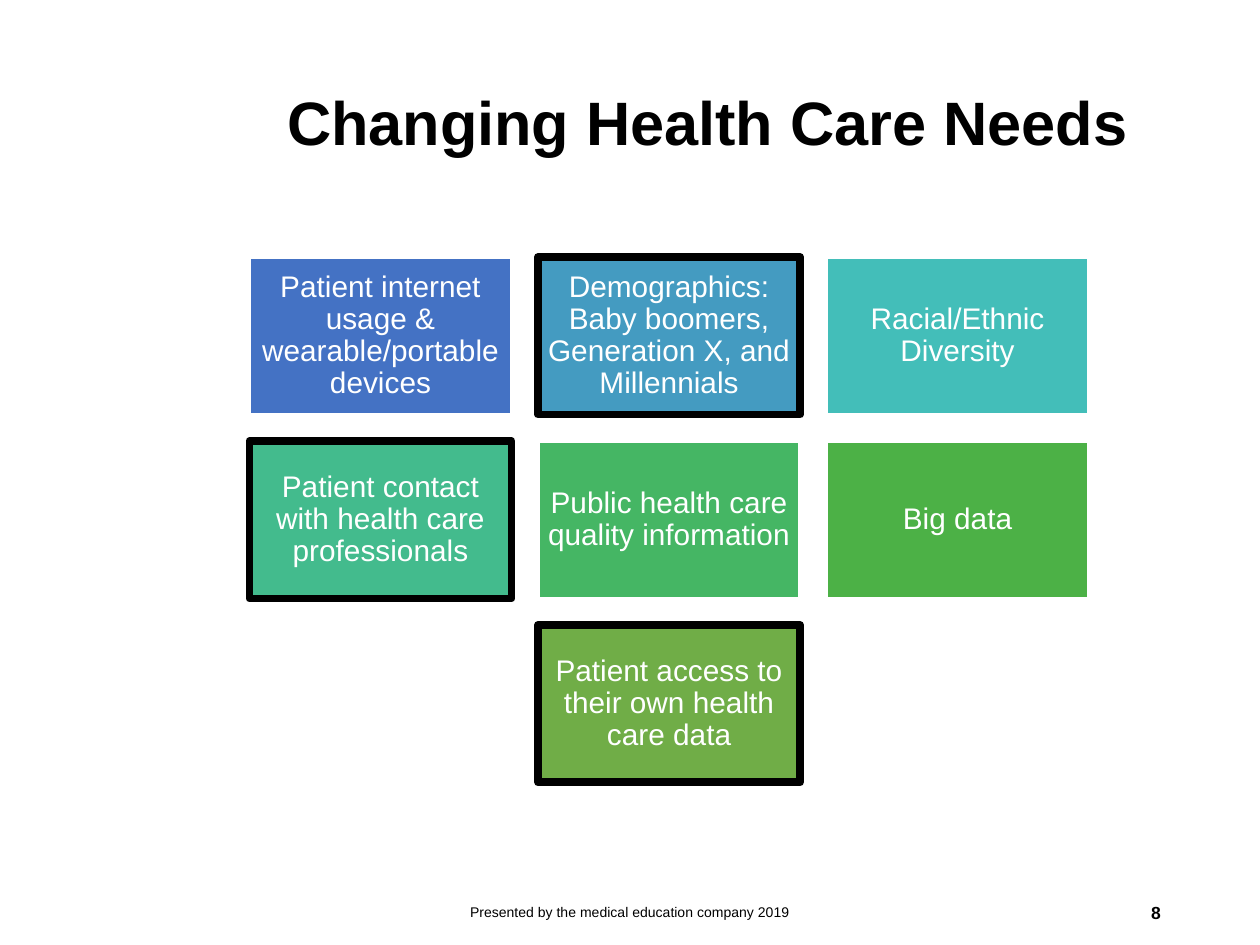
"""Build the slide on changing health care needs with its grid of seven topics."""
from pptx import Presentation
from pptx.dml.color import RGBColor
from pptx.enum.shapes import MSO_SHAPE
from pptx.enum.text import MSO_ANCHOR, PP_ALIGN
from pptx.util import Inches, Pt

RECTANGLE = MSO_SHAPE.RECTANGLE
MIDDLE = MSO_ANCHOR.MIDDLE
LEFT, CENTER, RIGHT = PP_ALIGN.LEFT, PP_ALIGN.CENTER, PP_ALIGN.RIGHT
BLACK, WHITE = "000000", "FFFFFF"


def color(value):
    return RGBColor.from_string(value)


def write(shape, text, size, font_color=BLACK, bold=False, align=LEFT,
          spacing=1.0, margins=(0.1, 0.05)):
    frame = shape.text_frame
    frame.word_wrap = True
    frame.vertical_anchor = MIDDLE
    frame.margin_left = frame.margin_right = Inches(margins[0])
    frame.margin_top = frame.margin_bottom = Inches(margins[1])
    paragraph = frame.paragraphs[0]
    paragraph.text = text
    paragraph.alignment = align
    paragraph.line_spacing = spacing
    paragraph.font.name = "Arial"
    paragraph.font.size = Pt(size)
    paragraph.font.bold = bold
    paragraph.font.color.rgb = color(font_color)


presentation = Presentation()
presentation.slide_width = Inches(10)
presentation.slide_height = Inches(7.5)
slide = presentation.slides.add_slide(presentation.slide_layouts[6])

title = slide.shapes.add_textbox(Inches(2.18), Inches(0.27), Inches(7.14), Inches(1.45))
write(title, "Changing Health Care Needs", size=35, bold=True, spacing=0.9)

footer = slide.shapes.add_textbox(Inches(3.31), Inches(7.04), Inches(3.38), Inches(0.4))
write(footer, "Presented by the medical education company 2019", size=8, align=CENTER)

slide_number = slide.shapes.add_textbox(Inches(7.06), Inches(7.04), Inches(2.25), Inches(0.4))
write(slide_number, "8", size=10, bold=True, align=RIGHT)

topics = [
    (0, 0, "4472C4", False, "Patient internet usage & wearable/portable devices"),
    (1, 0, "449BC1", True, "Demographics: Baby boomers, Generation X, and Millennials"),
    (2, 0, "43BEB9", False, "Racial/Ethnic Diversity"),
    (0, 1, "43BB8D", True, "Patient contact with health care professionals"),
    (1, 1, "45B664", False, "Public health care quality information"),
    (2, 1, "4CB146", False, "Big data"),
    (1, 2, "70AD47", True, "Patient access to their own health care data"),
]
grid_left, grid_top = 1.98, 2.04
box_width, box_height = 2.08, 1.25
gap = 0.21

for column, row, fill, outlined, text in topics:
    box = slide.shapes.add_shape(
        RECTANGLE,
        Inches(grid_left + column * (box_width + gap)),
        Inches(grid_top + row * (box_height + gap)),
        Inches(box_width),
        Inches(box_height),
    )
    box.shadow.inherit = False
    box.fill.solid()
    box.fill.fore_color.rgb = color(fill)
    box.line.color.rgb = color(BLACK if outlined else WHITE)
    box.line.width = Pt(4.5 if outlined else 2)
    write(box, text, size=17, font_color=WHITE, align=CENTER, spacing=0.9,
          margins=(0.07, 0.07))

presentation.save("out.pptx")
